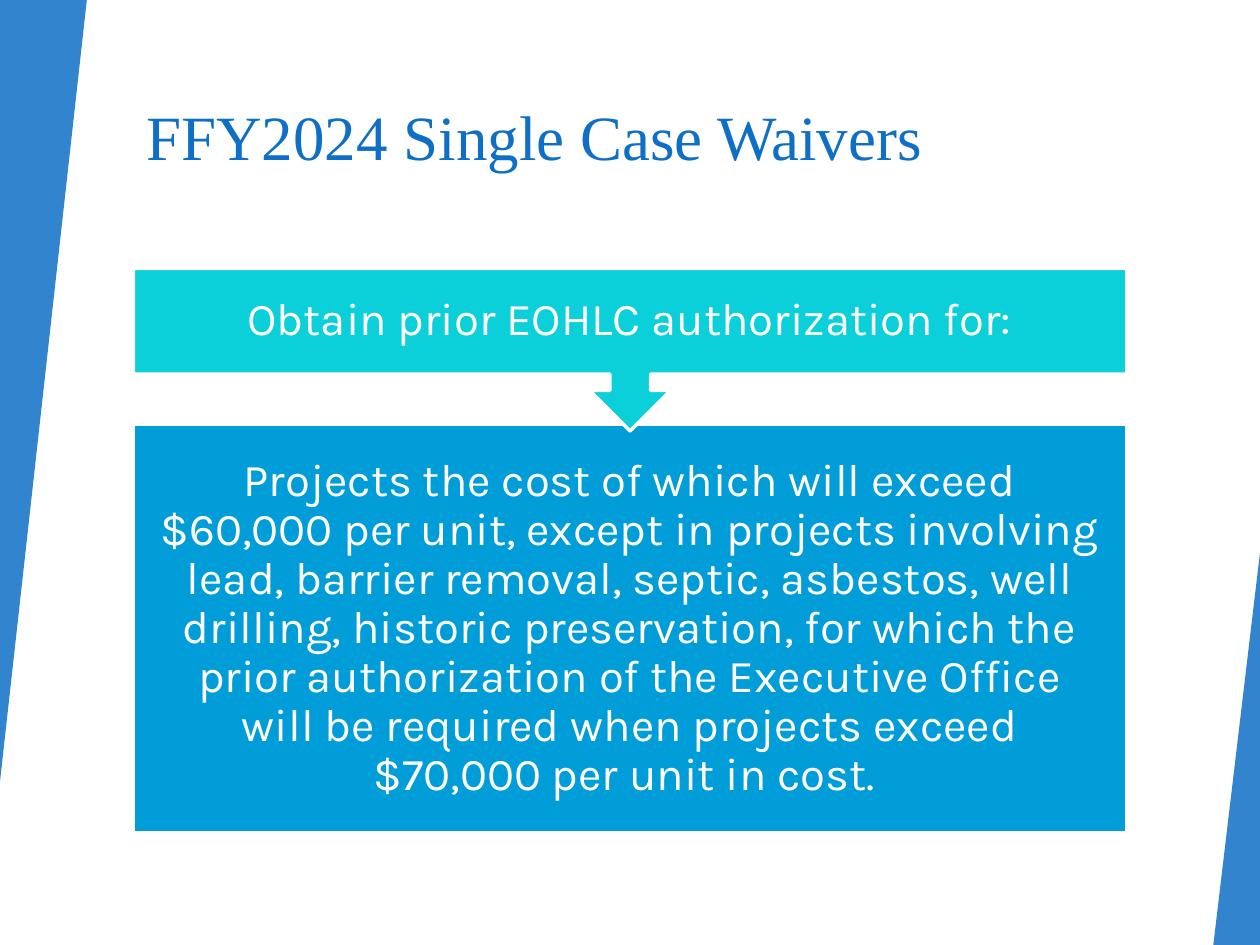
from lxml.etree import SubElement
from pptx import Presentation
from pptx.dml.color import RGBColor
from pptx.enum.shapes import MSO_SHAPE as Shape
from pptx.enum.text import MSO_ANCHOR as Anchor, PP_ALIGN as Align
from pptx.oxml.ns import qn
from pptx.util import Cm, Pt

COLORS = {"accent": "0F6FC6", "blue": "009DD9", "cyan": "0BD0D9", "white": "FFFFFF"}
WIDTH, HEIGHT = 25.4, 19.05


class WaiverSlide:
    body_font, body_size = "Karla", 26
    title_font, title_size = "Times New Roman", 36

    def __init__(self, deck):
        self.page = deck.slides.add_slide(deck.slide_layouts[6])

    def color(self, name):
        return RGBColor.from_string(COLORS[name])

    def set_text(self, frame, text, font, size, color, inset):
        frame.word_wrap = True
        frame.margin_left = frame.margin_right = Cm(inset)
        frame.margin_top = frame.margin_bottom = Cm(inset)
        para = frame.paragraphs[0]
        para.text = text
        for span in para.runs:
            span.font.name = font
            span.font.size = Pt(size)
            span.font.color.rgb = self.color(color)
        return para

    def shape(self, kind, left, top, width, height, fill):
        item = self.page.shapes.add_shape(kind, Cm(left), Cm(top), Cm(width), Cm(height))
        item.shadow.inherit = False
        item.fill.solid()
        item.fill.fore_color.rgb = self.color(fill)
        return item

    def title(self, text, left, top, width, height):
        box = self.page.shapes.add_textbox(Cm(left), Cm(top), Cm(width), Cm(height))
        self.set_text(box.text_frame, text, self.title_font, self.title_size, "accent", 0.26)

    def wedge(self, left, top, width, height, rotation=0):
        item = self.shape(Shape.ISOSCELES_TRIANGLE, left, top, width, height, "accent")
        item.adjustments[0] = 1
        item.rotation = rotation
        item.line.fill.background()
        tint = item.element.spPr.find(qn("a:solidFill"))[0]
        SubElement(tint, qn("a:alpha"), val="85000")

    def step(self, kind, top, height, fill, text):
        item = self.shape(kind, 2.69, top, 20.03, height, fill)
        item.line.color.rgb = self.color("white")
        item.line.width = Pt(2)
        frame = item.text_frame
        frame.vertical_anchor = Anchor.MIDDLE
        para = self.set_text(frame, text, self.body_font, self.body_size, "white", 0.51)
        para.alignment = Align.CENTER
        para.line_spacing = 0.9


def main():
    deck = Presentation()
    deck.slide_width, deck.slide_height = Cm(WIDTH), Cm(HEIGHT)
    slide = WaiverSlide(deck)
    slide.title("FFY2024 Single Case Waivers", 2.69, 1.7, 21.23, 3.05)
    slide.wedge(0, 0, 1.75, 15.75, rotation=180)
    slide.wedge(WIDTH - 0.94, HEIGHT - 7.9, 0.94, 7.9)
    slide.step(
        Shape.RECTANGLE, 8.56, 8.23, "blue",
        "Projects the cost of which will exceed $60,000 per unit, except in projects "
        "involving lead, barrier removal, septic, asbestos, well drilling, historic "
        "preservation, for which the prior authorization of the Executive Office will "
        "be required when projects exceed $70,000 per unit in cost. ",
    )
    slide.step(
        Shape.DOWN_ARROW_CALLOUT, 5.41, 3.28, "cyan",
        "Obtain prior EOHLC authorization for:",
    )
    deck.save("out.pptx")


if __name__ == "__main__":
    main()
